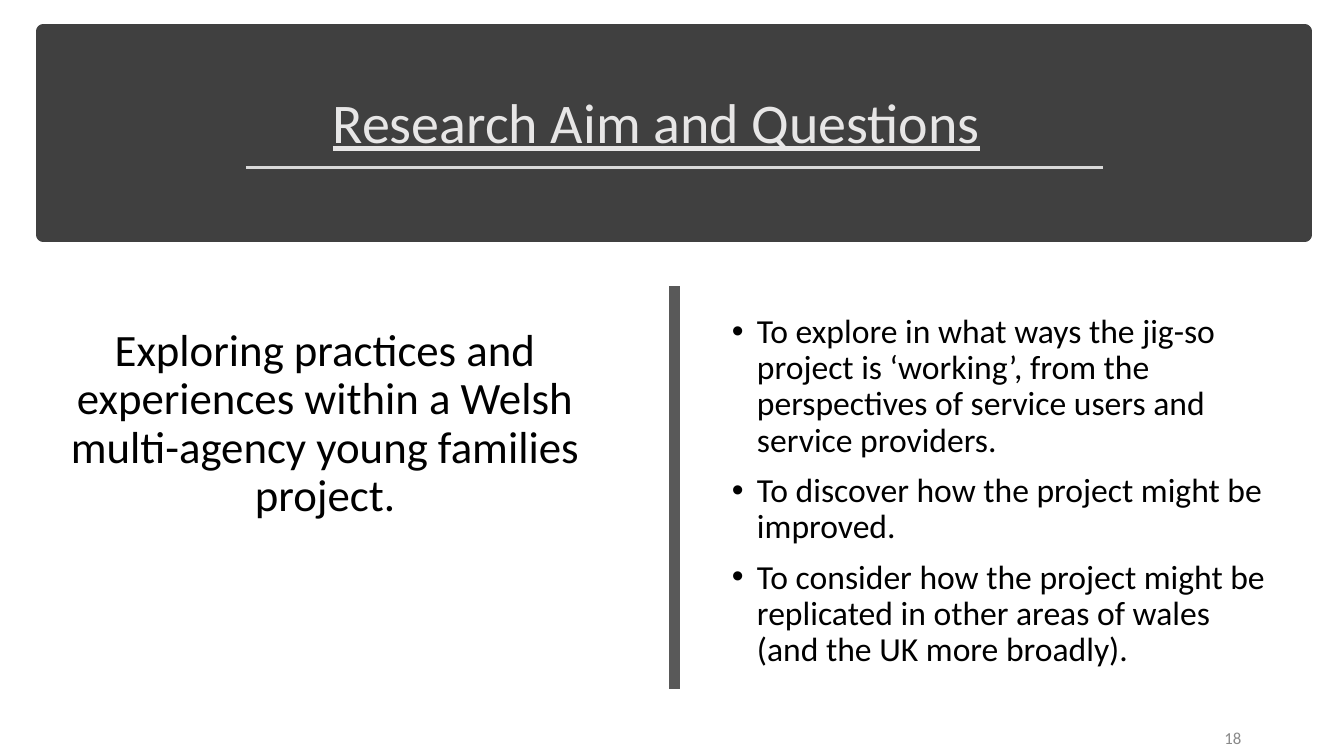
"""Build the research aim and questions slide."""
from dataclasses import dataclass

from lxml import etree
from pptx import Presentation
from pptx.dml.color import RGBColor
from pptx.enum.shapes import MSO_CONNECTOR, MSO_SHAPE
from pptx.enum.text import MSO_ANCHOR, PP_ALIGN
from pptx.oxml.ns import qn
from pptx.util import Inches, Pt

RECTANGLE = MSO_SHAPE.RECTANGLE
STRAIGHT = MSO_CONNECTOR.STRAIGHT
TOP, MIDDLE, BOTTOM = MSO_ANCHOR.TOP, MSO_ANCHOR.MIDDLE, MSO_ANCHOR.BOTTOM
LEFT, CENTER, RIGHT = PP_ALIGN.LEFT, PP_ALIGN.CENTER, PP_ALIGN.RIGHT
FONT = "Calibri"
BULLET_INDENT = 0.25


@dataclass
class TextBlock:
    box: tuple[float, float, float, float]
    paragraphs: list[str]
    size: float
    color: str
    alignment: PP_ALIGN
    anchor: MSO_ANCHOR = TOP
    line_spacing: float = 0.9
    space_before: float = 0
    space_after: float = 0
    bottom_margin: float = 0.05
    underline: bool = False
    bulleted: bool = False


@dataclass
class Rule:
    start: tuple[float, float]
    end: tuple[float, float]
    color: str
    width: float


RULES = [
    Rule((2.44, 1.66), (10.94, 1.66), "D9D9D9", 1.75),
    Rule((6.69, 2.84), (6.69, 6.84), "595959", 8),
]

TEXT_BLOCKS = [
    TextBlock((0.23, 3.2, 5.99, 2.5),
              ["Exploring practices and experiences within a Welsh "
               "multi-agency young families project."],
              32, "000000", CENTER, anchor=BOTTOM, bottom_margin=0.53),
    TextBlock((1.51, 0.89, 10, 0.91), ["Research Aim and Questions"],
              40, "E7E6E6", CENTER, space_before=10, underline=True),
    TextBlock((9.41, 7.13, 3, 0.38), ["18"], 12, "898989", RIGHT,
              anchor=MIDDLE, line_spacing=1.0, space_after=6),
    TextBlock((7.16, 3.07, 5.57, 4.76),
              ["To explore in what ways the jig-so project is ‘working’, from the "
               "perspectives of service users and service providers.",
               "To discover how the project might be improved.",
               "To consider how the project might be replicated in other areas of "
               "wales (and the UK more broadly)."],
              24, "000000", LEFT, space_before=10, bulleted=True),
]


def rgb(color: str) -> RGBColor:
    return RGBColor.from_string(color)


def add_banner(slide) -> None:
    banner = slide.shapes.add_shape(
        RECTANGLE, Inches(0.43), Inches(0.31), Inches(12.51), Inches(2.02))
    banner.shadow.inherit = False
    banner.fill.solid()
    banner.fill.fore_color.rgb = rgb("404040")
    banner.line.color.rgb = rgb("404040")
    banner.line.width = Pt(10)


def add_rule(slide, rule: Rule) -> None:
    connector = slide.shapes.add_connector(
        STRAIGHT, *(Inches(value) for value in rule.start + rule.end))
    connector.line.color.rgb = rgb(rule.color)
    connector.line.width = Pt(rule.width)
    etree.SubElement(connector._element.spPr, qn("a:effectLst"))


def add_bullet(paragraph) -> None:
    properties = paragraph._p.get_or_add_pPr()
    properties.set("marL", str(Inches(BULLET_INDENT)))
    properties.set("indent", str(-Inches(BULLET_INDENT)))
    etree.SubElement(properties, qn("a:buFont")).set("typeface", "Arial")
    etree.SubElement(properties, qn("a:buChar")).set("char", "•")


def add_text(slide, block: TextBlock) -> None:
    shape = slide.shapes.add_textbox(*(Inches(value) for value in block.box))
    text_frame = shape.text_frame
    text_frame.word_wrap = True
    text_frame.vertical_anchor = block.anchor
    text_frame.margin_bottom = Inches(block.bottom_margin)
    text_frame.text = "\n".join(block.paragraphs)
    for paragraph in text_frame.paragraphs:
        paragraph.alignment = block.alignment
        paragraph.line_spacing = block.line_spacing
        paragraph.space_before = Pt(block.space_before)
        paragraph.space_after = Pt(block.space_after)
        if block.bulleted:
            add_bullet(paragraph)
        for run in paragraph.runs:
            run.font.name = FONT
            run.font.size = Pt(block.size)
            run.font.color.rgb = rgb(block.color)
            run.font.underline = block.underline


def main() -> None:
    presentation = Presentation()
    presentation.slide_width = Inches(13.33)
    presentation.slide_height = Inches(7.5)
    slide = presentation.slides.add_slide(presentation.slide_layouts[6])
    add_banner(slide)
    for rule in RULES:
        add_rule(slide, rule)
    for block in TEXT_BLOCKS:
        add_text(slide, block)
    presentation.save("out.pptx")


if __name__ == "__main__":
    main()
